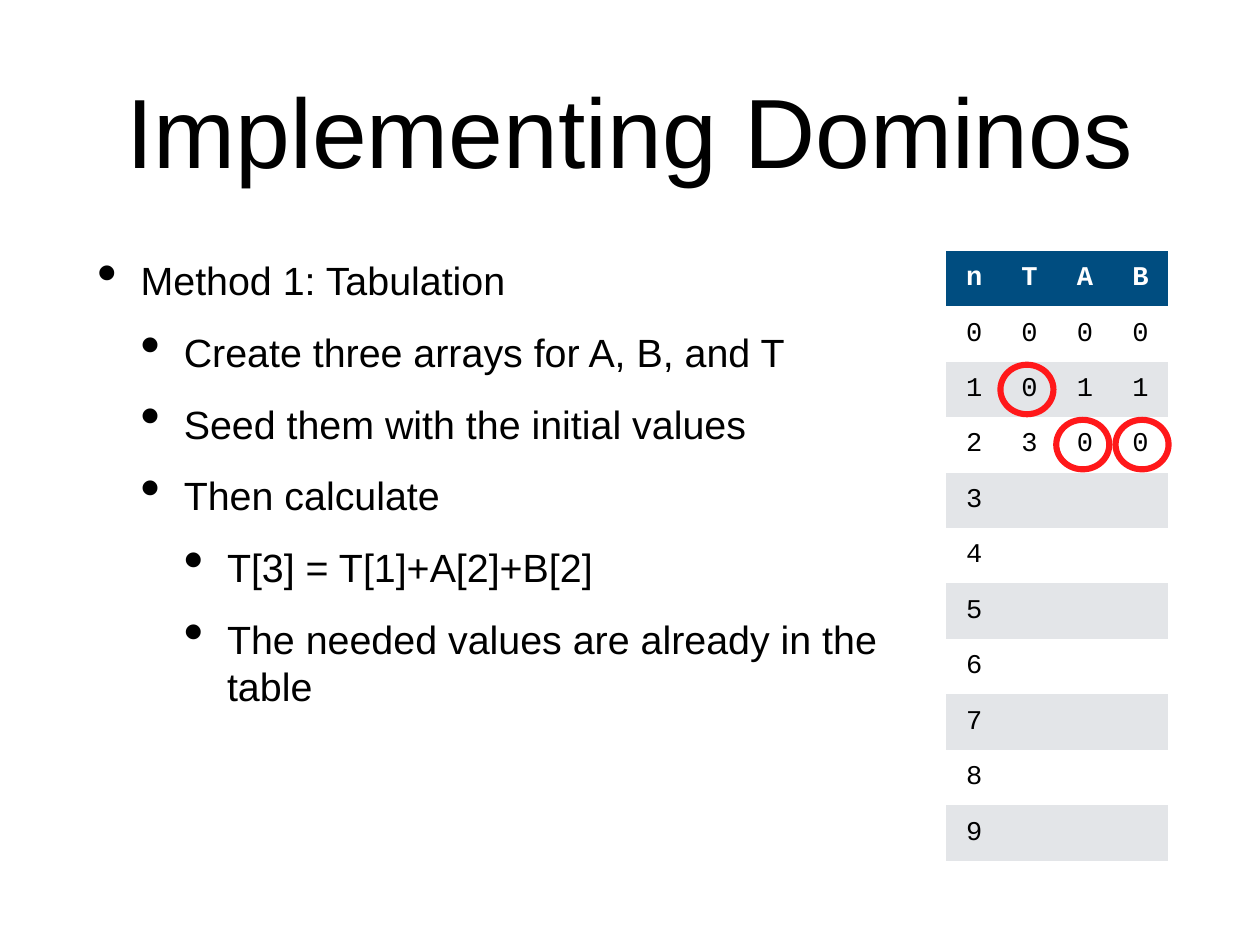
from dataclasses import dataclass

from lxml import etree
from pptx import Presentation
from pptx.dml.color import RGBColor
from pptx.enum.shapes import MSO_SHAPE
from pptx.enum.text import MSO_ANCHOR, PP_ALIGN
from pptx.oxml.ns import qn
from pptx.util import Cm, Pt

OVAL = MSO_SHAPE.OVAL
MIDDLE = MSO_ANCHOR.MIDDLE
CENTER = PP_ALIGN.CENTER


@dataclass(frozen=True)
class Theme:
    black: RGBColor = RGBColor.from_string("000000")
    white: RGBColor = RGBColor.from_string("FFFFFF")
    header: RGBColor = RGBColor.from_string("004D80")
    band: RGBColor = RGBColor.from_string("E3E5E8")
    mark: RGBColor = RGBColor.from_string("FF181A")
    text_font: str = "Arial"
    code_font: str = "Courier New"
    title_size: Pt = Pt(80)
    body_size: Pt = Pt(32)
    cell_size: Pt = Pt(22)


theme = Theme()
MARGIN = Cm(0.15)
INDENT = Cm(1.24)
CELL = Cm(1.59)


def add_text_frame(left, top, width, height):
    frame = slide.shapes.add_textbox(Cm(left), Cm(top), Cm(width), Cm(height)).text_frame
    frame.word_wrap = True
    frame.margin_left = frame.margin_right = MARGIN
    frame.margin_top = frame.margin_bottom = MARGIN
    return frame


def add_run(paragraph, text, font, size, color, bold=False):
    run = paragraph.add_run()
    run.text = text
    run.font.name = font
    run.font.size = size
    run.font.color.rgb = color
    run.font.bold = bold


presentation = Presentation()
presentation.slide_width = Cm(36.12)
presentation.slide_height = Cm(27.1)
slide = presentation.slides.add_slide(presentation.slide_layouts[6])

title_frame = add_text_frame(2.64, 0.71, 30.84, 5.99)
title_frame.vertical_anchor = MIDDLE
title = title_frame.paragraphs[0]
title.alignment = CENTER
add_run(title, "Implementing Dominos", theme.text_font, theme.title_size, theme.black)

bullets = [
    (0, "Method 1: Tabulation"),
    (1, "Create three arrays for A, B, and T"),
    (1, "Seed them with the initial values"),
    (1, "Then calculate"),
    (2, "T[3] = T[1]+A[2]+B[2]"),
    (2, "The needed values are already in the table"),
]
body_frame = add_text_frame(2.64, 7.19, 23.6, 17.48)
for index, (level, text) in enumerate(bullets):
    paragraph = body_frame.add_paragraph() if index else body_frame.paragraphs[0]
    paragraph.level = level
    paragraph.space_before = Pt(20)
    properties = paragraph._p.get_or_add_pPr()
    properties.set("marL", str(INDENT * (level + 1)))
    properties.set("indent", str(-INDENT))
    etree.SubElement(properties, qn("a:buSzPct")).set("val", "145000")
    etree.SubElement(properties, qn("a:buChar")).set("char", "•")
    add_run(paragraph, text, theme.text_font, theme.body_size, theme.black)

rows = ["nTAB", "0000", "1011", "2300"] + [str(n) for n in range(3, 10)]
columns = len(rows[0])
table = slide.shapes.add_table(
    len(rows), columns, Cm(27.13), Cm(7.19), CELL * columns, CELL * len(rows)
).table
for column in table.columns:
    column.width = CELL
for row_index, values in enumerate(rows):
    table.rows[row_index].height = CELL
    is_header = row_index == 0
    fill_color = theme.header if is_header else (theme.band, theme.white)[row_index % 2]
    text_color = theme.white if is_header else theme.black
    for column_index in range(columns):
        cell = table.cell(row_index, column_index)
        cell.fill.solid()
        cell.fill.fore_color.rgb = fill_color
        cell.vertical_anchor = MIDDLE
        cell.margin_left = cell.margin_right = MARGIN
        cell.margin_top = cell.margin_bottom = MARGIN
        for position, border in enumerate(("a:lnL", "a:lnR", "a:lnT", "a:lnB")):
            line = etree.Element(qn(border), w="0")
            etree.SubElement(line, qn("a:noFill"))
            cell._tc.tcPr.insert(position, line)
        if column_index < len(values):
            paragraph = cell.text_frame.paragraphs[0]
            paragraph.alignment = CENTER
            add_run(paragraph, values[column_index], theme.code_font, theme.cell_size,
                    text_color, is_header)

for left, top in [(28.68, 10.46), (30.28, 12.04), (31.98, 12.04)]:
    circle = slide.shapes.add_shape(OVAL, Cm(left), Cm(top), Cm(1.52), Cm(1.42))
    circle.shadow.inherit = False
    circle.fill.background()
    circle.line.color.rgb = theme.mark
    circle.line.width = Pt(5)

presentation.save("out.pptx")
